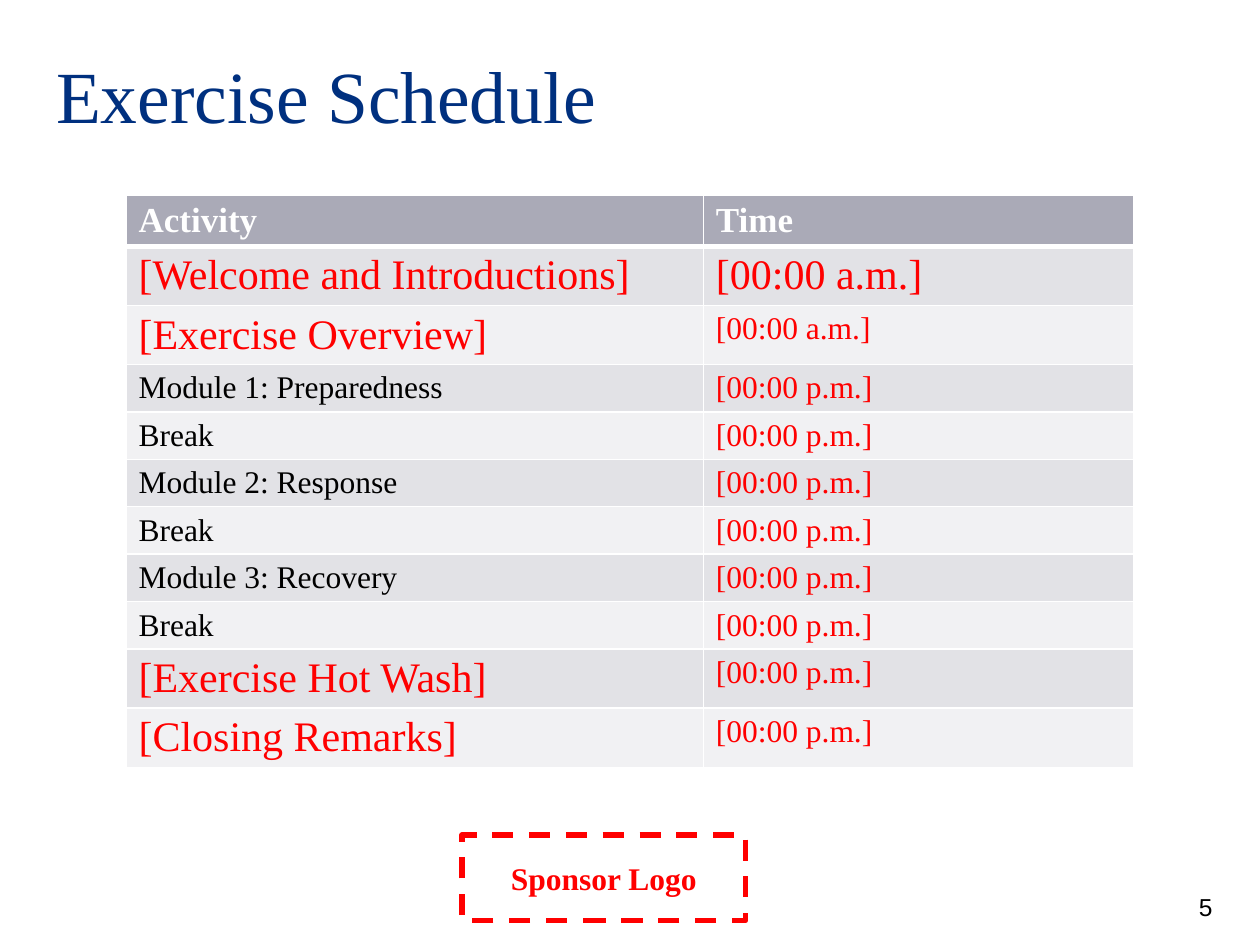
from lxml import etree
from pptx import Presentation
from pptx import util as u
from pptx.dml.color import RGBColor
from pptx.enum import dml, shapes, text
from pptx.oxml import ns

Pt = u.Pt
SERIF = "Times New Roman"
COLORS = {
    "navy": "00307F", "red": "FF0000", "black": "000000", "white": "FFFFFF",
    "head": "AAAAB7", "odd": "E2E2E6", "even": "F1F1F3",
}
BIG, SMALL = 24, 18
HEIGHTS = {20: 29.1, BIG: 33.8, SMALL: 27.1}
# activity, its size and colour, time, size of the time
ROWS = [
    ("[Welcome and Introductions]", BIG, "red", "[00:00 a.m.]", BIG),
    ("[Exercise Overview]", BIG, "red", "[00:00 a.m.]", SMALL),
    *[(name, SMALL, "black", "[00:00 p.m.]", SMALL) for name in (
        "Module 1: Preparedness", "Break",
        "Module 2: Response", "Break",
        "Module 3: Recovery", "Break")],
    ("[Exercise Hot Wash]", BIG, "red", "[00:00 p.m.]", SMALL),
    ("[Closing Remarks]", BIG, "red", "[00:00 p.m.]", SMALL),
]


def color(name):
    return RGBColor.from_string(COLORS[name])


def write(frame, words, size, tint, name=SERIF, bold=False):
    """Put one formatted paragraph in a text frame and return it."""
    para = frame.paragraphs[0]
    run = para.add_run()
    run.text = words
    look = {"size": Pt(size), "name": name, "bold": bold}
    for key, value in look.items():
        setattr(run.font, key, value)
    run.font.color.rgb = color(tint)
    return para


def add_text(slide, box, words, size, tint, name=SERIF, anchor="TOP"):
    frame = slide.shapes.add_textbox(*map(Pt, box)).text_frame
    frame.word_wrap = True
    frame.vertical_anchor = text.MSO_ANCHOR[anchor]
    write(frame, words, size, tint, name)


def add_frame(slide, box, words):
    """Add a dashed box with a centred label."""
    shape = slide.shapes.add_shape(shapes.MSO_SHAPE.RECTANGLE, *map(Pt, box))
    shape.shadow.inherit = False
    shape.fill.background()
    shape.line.color.rgb = color("red")
    shape.line.width = Pt(3)
    shape.line.dash_style = dml.MSO_LINE.DASH
    shape.text_frame.vertical_anchor = text.MSO_ANCHOR.MIDDLE
    para = write(shape.text_frame, words, 18, "red", bold=True)
    para.alignment = text.PP_ALIGN.CENTER


def edge(cell, widths):
    """Draw white borders; they must come before the fill in the cell."""
    props = cell._tc.get_or_add_tcPr()
    for spot, (side, width) in enumerate(widths.items()):
        line = etree.Element(ns.qn(f"a:ln{side}"), w=str(Pt(width)))
        fill = etree.SubElement(line, ns.qn("a:solidFill"))
        etree.SubElement(fill, ns.qn("a:srgbClr"), val=COLORS["white"])
        props.insert(spot, line)


def set_cell(cell, words, size, tint, fill, bold=False, top=1, low=1):
    write(cell.text_frame, words, size, tint, bold=bold)
    cell.margin_bottom = Pt(1)
    cell.fill.solid()
    cell.fill.fore_color.rgb = color(fill)
    edge(cell, {"L": 1, "R": 1, "T": top, "B": low})


def add_plan(slide, left, top, widths):
    """Add the table of activities and times."""
    tall = [HEIGHTS[20]] + [HEIGHTS[row[1]] for row in ROWS]
    box = map(Pt, (left, top, sum(widths), sum(tall)))
    table = slide.shapes.add_table(len(tall), len(widths), *box).table
    for col, width in zip(table.columns, widths):
        col.width = Pt(width)
    for row, height in zip(table.rows, tall):
        row.height = Pt(height)
    for col, words in enumerate(("Activity", "Time")):
        set_cell(table.cell(0, col), words, 20, "white", "head", True, low=3)
    for num, (name, size, tint, time, small) in enumerate(ROWS, 1):
        fill = "odd" if num % 2 else "even"
        top = 3 if num == 1 else 1
        set_cell(table.cell(num, 0), name, size, tint, fill, top=top)
        set_cell(table.cell(num, 1), time, small, "red", fill, top=top)


def main():
    deck = Presentation()
    deck.slide_width, deck.slide_height = Pt(720), Pt(540)
    slide = deck.slides.add_slide(deck.slide_layouts[6])
    add_frame(slide, (264, 477.2, 162, 48.96), "Sponsor Logo")
    add_text(slide, (678, 506.16, 36, 20.16), "5", 14, "black", "Arial")
    add_plan(slide, 72, 111.6, (329.9, 246.1))
    add_text(slide, (25, 0, 588, 82.4), "Exercise Schedule", 42, "navy",
             anchor="BOTTOM")
    deck.save("out.pptx")


if __name__ == "__main__":
    main()
